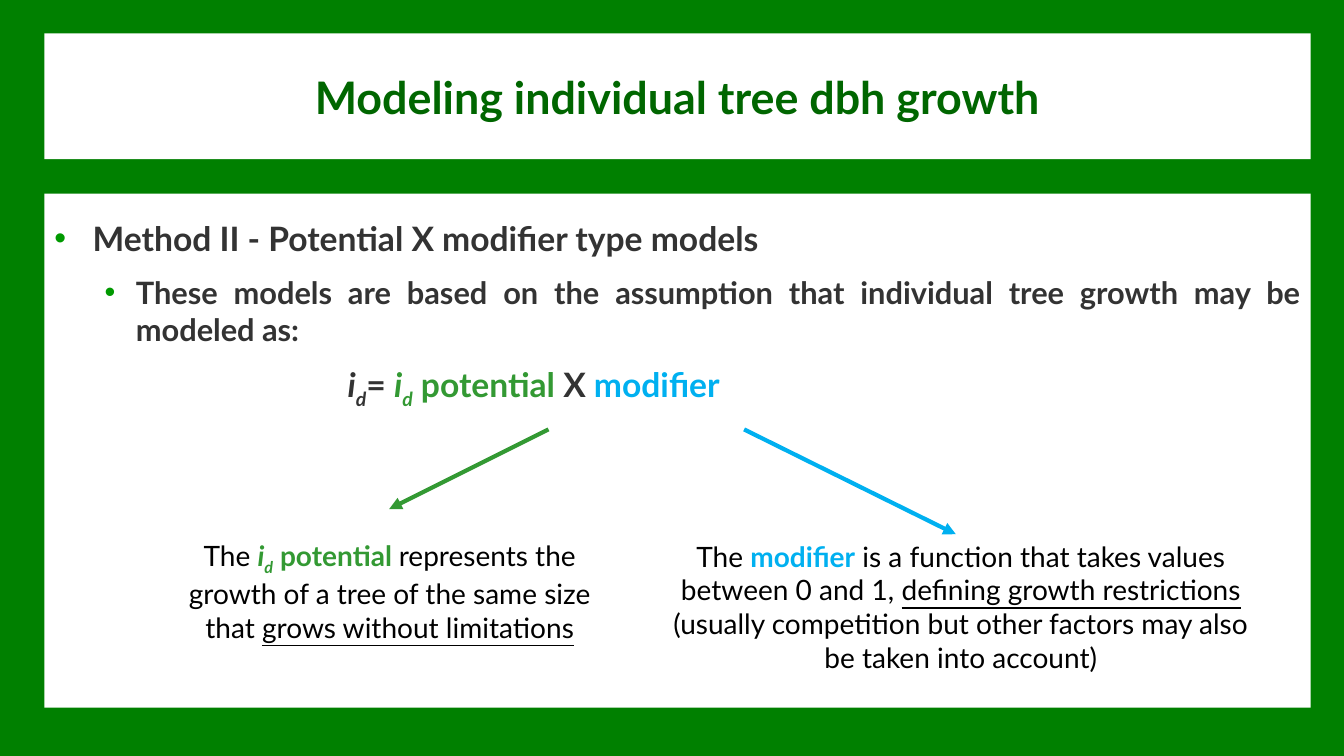
from dataclasses import dataclass

from lxml import etree
from pptx import Presentation
from pptx.dml.color import RGBColor
from pptx.enum.shapes import MSO_CONNECTOR, MSO_SHAPE
from pptx.enum.text import MSO_ANCHOR, PP_ALIGN
from pptx.oxml.ns import qn
from pptx.util import Inches, Pt

RECTANGLE = MSO_SHAPE.RECTANGLE
STRAIGHT = MSO_CONNECTOR.STRAIGHT
TOP, MIDDLE = MSO_ANCHOR.TOP, MSO_ANCHOR.MIDDLE
LEFT, CENTER, JUSTIFY = PP_ALIGN.LEFT, PP_ALIGN.CENTER, PP_ALIGN.JUSTIFY


@dataclass(frozen=True)
class Theme:
    font: str = "Lato"
    background: str = "008000"
    panel: str = "FFFFFF"
    title: str = "006600"
    body: str = "333333"
    note: str = "000000"
    bullet: str = "009900"
    potential: str = "339933"
    modifier: str = "00B0F0"
    title_size: int = 32
    heading_size: int = 24
    point_size: int = 22
    note_size: int = 20
    arrow_width: int = 3


def span(text, **style):
    """Pair a piece of text with its format: color, bold, italic, underline, subscript."""
    return text, style


class SlideBuilder:
    def __init__(self, page, theme):
        self.page = page
        self.theme = theme
        page.background.fill.solid()
        page.background.fill.fore_color.rgb = RGBColor.from_string(theme.background)

    def panel(self, left, top, width, height, anchor, top_inset=0.05):
        box = self.page.shapes.add_shape(
            RECTANGLE, Inches(left), Inches(top), Inches(width), Inches(height))
        box.shadow.inherit = False
        box.fill.solid()
        box.fill.fore_color.rgb = RGBColor.from_string(self.theme.panel)
        box.line.fill.background()
        frame = box.text_frame
        frame.word_wrap = True
        frame.vertical_anchor = anchor
        frame.margin_top = Inches(top_inset)
        return frame

    def text_box(self, left, top, width, height):
        box = self.page.shapes.add_textbox(
            Inches(left), Inches(top), Inches(width), Inches(height))
        box.text_frame.word_wrap = True
        return box.text_frame

    def paragraph(self, frame, spans, size, color, align, bold=False,
                  margin=0, hanging=0, before=0, bullet=False):
        """Fill the empty first paragraph of the frame, or add one after it."""
        para = frame.paragraphs[0]
        if para.runs:
            para = frame.add_paragraph()
        para.alignment = align
        para.space_before = Pt(before)
        properties = para._p.get_or_add_pPr()
        properties.set("marL", str(Inches(margin)))
        properties.set("indent", str(-Inches(hanging)))
        if bullet:
            tint = etree.SubElement(properties, qn("a:buClr"))
            etree.SubElement(tint, qn("a:srgbClr"), val=self.theme.bullet)
            etree.SubElement(properties, qn("a:buFont"), typeface="Arial")
            etree.SubElement(properties, qn("a:buChar"), char="•")
        for text, style in spans:
            self.add_span(para, text, **{"size": size, "color": color, "bold": bold, **style})

    def add_span(self, para, text, size, color, bold, italic=False,
                 underline=False, subscript=False):
        run = para.add_run()
        run.text = text
        font = run.font
        font.name = self.theme.font
        font.size = Pt(size)
        font.bold = bold
        font.italic = italic
        font.underline = underline
        font.color.rgb = RGBColor.from_string(color)
        if subscript:
            run._r.get_or_add_rPr().set("baseline", "-25000")

    def arrow(self, start, end, color):
        line = self.page.shapes.add_connector(
            STRAIGHT, *(Inches(value) for value in (*start, *end)))
        line.line.color.rgb = RGBColor.from_string(color)
        line.line.width = Pt(self.theme.arrow_width)
        etree.SubElement(line.line._get_or_add_ln(), qn("a:tailEnd"), type="triangle")
        etree.SubElement(line._element.spPr, qn("a:effectLst"))


def growth_symbol(**style):
    """The symbol i with subscript d."""
    return [span("i", bold=True, italic=True, **style),
            span("d", bold=True, italic=True, subscript=True, **style)]


def main():
    theme = Theme()
    deck = Presentation()
    deck.slide_width, deck.slide_height = Inches(13.33), Inches(7.5)
    builder = SlideBuilder(deck.slides.add_slide(deck.slide_layouts[6]), theme)

    potential = growth_symbol(color=theme.potential) + [
        span(" potential ", color=theme.potential, bold=True)]
    modifier = span("modifier", color=theme.modifier, bold=True)

    title = builder.panel(0.44, 0.33, 12.56, 1.25, MIDDLE)
    builder.paragraph(title, [span("Modeling individual tree dbh growth")],
                      theme.title_size, theme.title, CENTER, bold=True)

    body = builder.panel(0.44, 1.92, 12.56, 5.1, TOP, top_inset=0.24)
    builder.paragraph(body, [span("Method II - Potential X modifier type models")],
                      theme.heading_size, theme.body, JUSTIFY, bold=True,
                      margin=0.38, hanging=0.38, bullet=True)
    builder.paragraph(body, [span("These models are based on the assumption that "
                                  "individual tree growth may be modeled as:")],
                      theme.point_size, theme.body, JUSTIFY, bold=True,
                      margin=0.81, hanging=0.31, before=11, bullet=True)
    builder.paragraph(body, [*growth_symbol(), span("= "), *potential, span("X "), modifier],
                      theme.heading_size, theme.body, LEFT, bold=True,
                      margin=2.91, before=12)

    potential_note = [
        span("The "), *potential,
        span("represents the growth of a tree of the same size that "),
        span("grows without limitations", underline=True)]
    modifier_note = [
        span("The "), modifier,
        span(" is a function that takes values between 0 and 1, "),
        span("defining growth restrictions ", underline=True),
        span("(usually competition but other factors may also be taken into account)")]
    for place, spans in (((1.67, 5.29, 4.29, 1.45), potential_note),
                         ((6.35, 5.3, 6.26, 1.45), modifier_note)):
        builder.paragraph(builder.text_box(*place), spans, theme.note_size,
                          theme.note, CENTER, margin=0.1)

    builder.arrow((5.44, 4.26), (3.86, 5.05), theme.potential)
    builder.arrow((7.38, 4.26), (9.48, 5.3), theme.modifier)

    deck.save("out.pptx")


if __name__ == "__main__":
    main()
